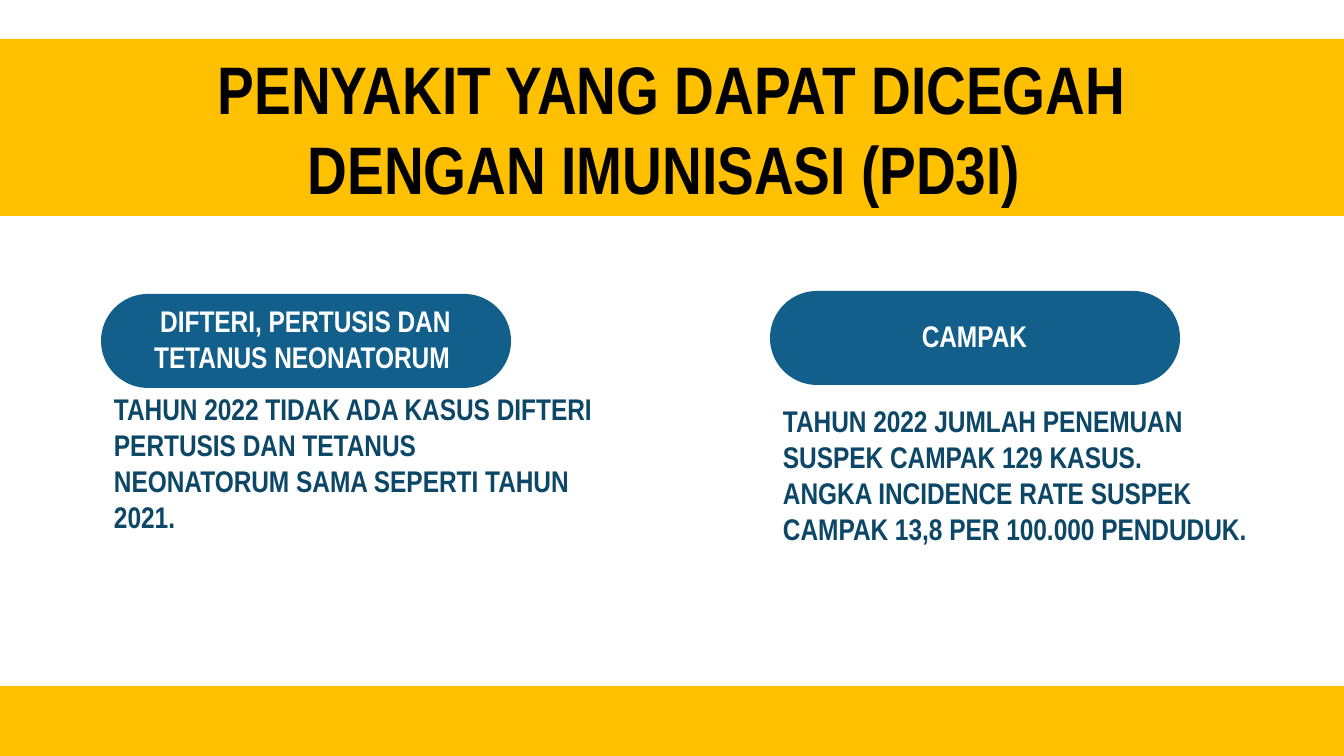
import dataclasses
import typing

import pptx
import pptx.dml.color
import pptx.enum.shapes
import pptx.enum.text
import pptx.util

EMU_PER_PX = 914400 / 134.4
SLIDE_WIDTH, SLIDE_HEIGHT = 1344, 756
INSET = 13
PILL_WIDTH, PILL_HEIGHT = 410, 94
YELLOW, BLUE, NAVY = "FFC000", "115F8A", "0D4767"
WHITE, BLACK = "FFFFFF", "000000"

SHAPES = pptx.enum.shapes.MSO_SHAPE
ALIGN = pptx.enum.text.PP_ALIGN
ANCHOR = pptx.enum.text.MSO_ANCHOR


@dataclasses.dataclass(frozen=True)
class Box:
    left: int
    top: int
    width: int
    height: int

    def emu(self) -> list[int]:
        return [px(length) for length in dataclasses.astuple(self)]


@dataclasses.dataclass(frozen=True)
class Disease:
    name: str
    pill_left: int
    pill_top: int
    findings: list[str]
    findings_top: int
    findings_anchor: typing.Any


DISEASES = [
    Disease(
        "DIFTERI, PERTUSIS DAN TETANUS NEONATORUM ", 101, 294,
        ["TAHUN 2022 TIDAK ADA KASUS DIFTERI PERTUSIS DAN TETANUS "
         "NEONATORUM SAMA SEPERTI TAHUN 2021."],
        437, ANCHOR.MIDDLE,
    ),
    Disease(
        "CAMPAK", 770, 291,
        ["TAHUN 2022 JUMLAH PENEMUAN SUSPEK CAMPAK 129 KASUS.",
         "ANGKA INCIDENCE RATE SUSPEK CAMPAK 13,8 PER 100.000 PENDUDUK."],
        390, ANCHOR.TOP,
    ),
]


def px(length: int) -> int:
    return round(length * EMU_PER_PX)


def color(value: str) -> pptx.dml.color.RGBColor:
    return pptx.dml.color.RGBColor.from_string(value)


def apply(target: typing.Any, formats: dict[str, typing.Any]) -> None:
    for name, value in formats.items():
        setattr(target, name, value)


def draw_shape(slide: typing.Any, preset: typing.Any, box: Box, fill: str) -> typing.Any:
    shape = slide.shapes.add_shape(preset, *box.emu())
    shape.shadow.inherit = False
    shape.fill.solid()
    shape.fill.fore_color.rgb = color(fill)
    shape.line.fill.background()
    return shape


def write(shape: typing.Any, lines: list[str], size: int, ink: str,
          align: typing.Any = ALIGN.CENTER, anchor: typing.Any = ANCHOR.MIDDLE) -> None:
    frame = shape.text_frame
    apply(frame, {
        "word_wrap": True,
        "auto_size": pptx.enum.text.MSO_AUTO_SIZE.NONE,
        "vertical_anchor": anchor,
        **{f"margin_{side}": px(INSET) for side in ("left", "top", "right", "bottom")},
    })
    frame.text = "\n".join(lines)
    for paragraph in frame.paragraphs:
        paragraph.alignment = align
        for run in paragraph.runs:
            apply(run.font, {"name": "Arial Narrow", "size": pptx.util.Pt(size), "bold": True})
            run.font.color.rgb = color(ink)


def draw_disease(slide: typing.Any, disease: Disease) -> None:
    left, top = disease.pill_left, disease.pill_top
    pill = draw_shape(slide, SHAPES.ROUNDED_RECTANGLE,
                      Box(left, top, PILL_WIDTH, PILL_HEIGHT), BLUE)
    pill.adjustments[0] = 0.5
    label = slide.shapes.add_textbox(*Box(left + 23, top + 24, 363, 42).emu())
    write(label, [disease.name], 16, WHITE)
    findings = slide.shapes.add_textbox(*Box(left, disease.findings_top, 505, 51).emu())
    write(findings, disease.findings, 16, NAVY, ALIGN.LEFT, disease.findings_anchor)


def main() -> None:
    deck = pptx.Presentation()
    apply(deck, {"slide_width": px(SLIDE_WIDTH), "slide_height": px(SLIDE_HEIGHT)})
    slide = deck.slides.add_slide(deck.slide_layouts[6])
    title_band = draw_shape(slide, SHAPES.RECTANGLE, Box(0, 39, SLIDE_WIDTH, 177), YELLOW)
    write(title_band, ["PENYAKIT YANG DAPAT DICEGAH", "DENGAN IMUNISASI (PD3I) "], 36, BLACK)
    draw_shape(slide, SHAPES.RECTANGLE, Box(0, 686, SLIDE_WIDTH, 70), YELLOW)
    for disease in DISEASES:
        draw_disease(slide, disease)
    deck.save("out.pptx")


if __name__ == "__main__":
    main()
